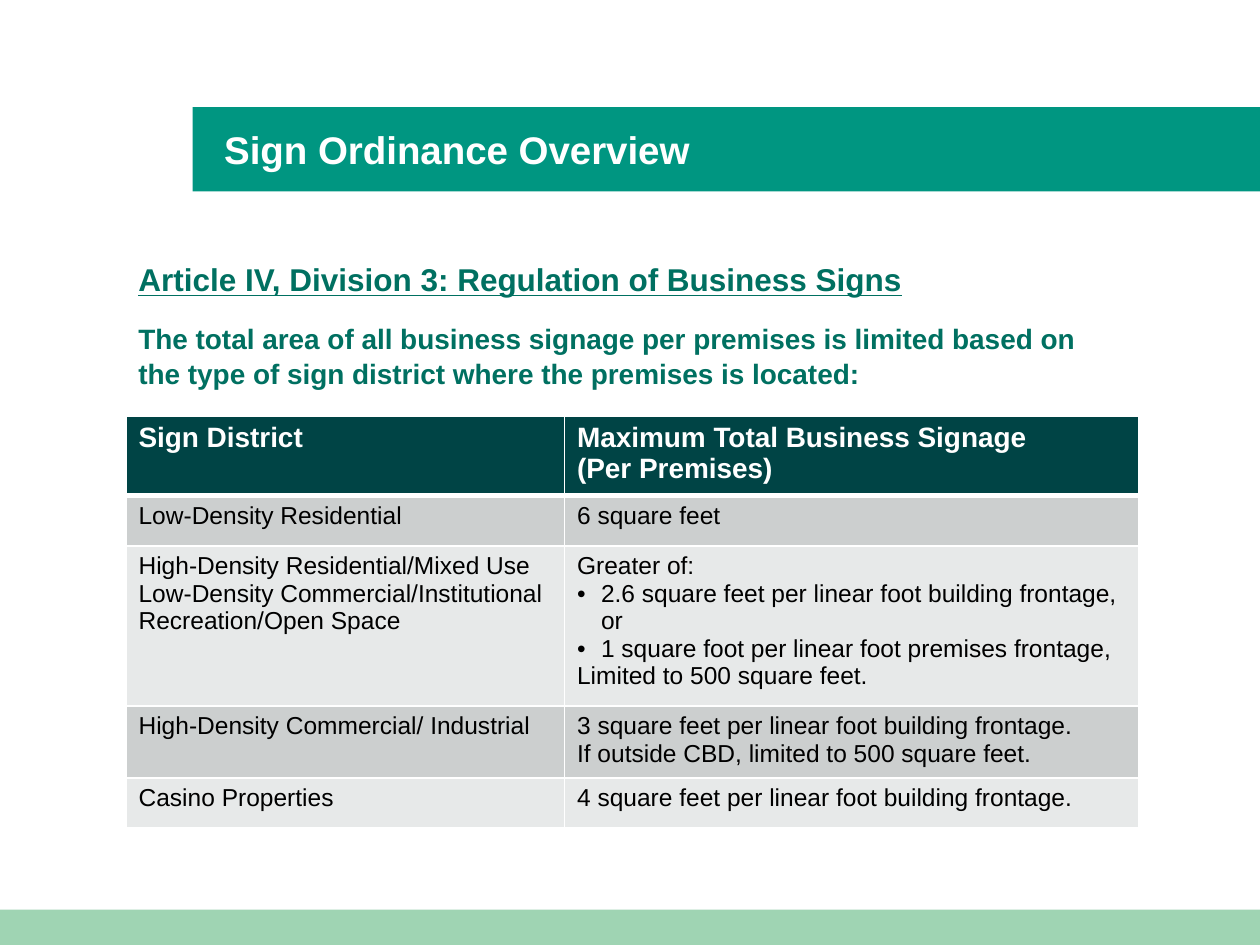
from lxml.etree import SubElement
from pptx import Presentation
from pptx.dml.color import RGBColor
from pptx.enum.shapes import MSO_SHAPE
from pptx.enum.text import MSO_ANCHOR
from pptx.oxml.ns import qn
from pptx.util import Inches, Pt

WHITE, BLACK = "FFFFFF", "000000"
TEAL, MINT, GREEN, DARK = "009681", "9FD4B3", "007061", "004445"
BANDS = ["CCCFCF", "E7E9E9"]
BULLET = "• "

ROWS = [
    ("Sign District", "Maximum Total Business Signage\n(Per Premises)"),
    ("Low-Density Residential", "6 square feet"),
    ("High-Density Residential/Mixed Use\n"
     "Low-Density Commercial/Institutional\n"
     "Recreation/Open Space",
     "Greater of:\n"
     "• 2.6 square feet per linear foot building frontage, or\n"
     "• 1 square foot per linear foot premises frontage,\n"
     "Limited to 500 square feet."),
    ("High-Density Commercial/ Industrial",
     "3 square feet per linear foot building frontage.\n"
     "If outside CBD, limited to 500 square feet."),
    ("Casino Properties", "4 square feet per linear foot building frontage."),
]
WIDTHS = [3.48, 4.56]
HEIGHTS = [0.63, 0.4, 1.27, 0.57, 0.4]


def paint(fill, color):
    fill.solid()
    fill.fore_color.rgb = RGBColor.from_string(color)


def mark(par):
    """Give the paragraph a hanging bullet."""
    props = par._p.get_or_add_pPr()
    props.set("marL", str(Inches(0.19)))
    props.set("indent", str(-Inches(0.19)))
    SubElement(props, qn("a:buFont"), typeface="Arial")
    SubElement(props, qn("a:buChar"), char=BULLET.strip())


def edge(cell, color, base):
    """Draw the four cell borders; base is the bottom width in points."""
    props = cell._tc.get_or_add_tcPr()
    sides = [("L", 1), ("R", 1), ("T", 1), ("B", base)]
    for spot, (side, width) in enumerate(sides):
        line = SubElement(props, qn("a:ln" + side), w=str(Pt(width)))
        fill = SubElement(line, qn("a:solidFill"))
        SubElement(fill, qn("a:srgbClr"), val=color)
        props.insert(spot, line)


class Page:
    def __init__(self, slide, font="Arial"):
        self.slide = slide
        self.font = font

    def style(self, par, size, color, bold=False, under=False):
        for run in par.runs:
            font = run.font
            font.name, font.size = self.font, Pt(size)
            font.bold, font.underline = bold, under
            font.color.rgb = RGBColor.from_string(color)

    def bar(self, x, y, w, h, color):
        shape = self.slide.shapes.add_shape(
            MSO_SHAPE.RECTANGLE, Inches(x), Inches(y), Inches(w), Inches(h))
        shape.shadow.inherit = False
        paint(shape.fill, color)
        shape.line.fill.background()

    def box(self, x, y, w, h, text):
        frame = self.slide.shapes.add_textbox(
            Inches(x), Inches(y), Inches(w), Inches(h)).text_frame
        frame.word_wrap = True
        frame.text = text
        return frame

    def title(self, x, y, w, h, text):
        frame = self.box(x, y, w, h, text)
        frame.vertical_anchor = MSO_ANCHOR.MIDDLE
        frame.margin_left = frame.margin_right = 0
        frame.margin_top = frame.margin_bottom = 0
        self.style(frame.paragraphs[0], 22, WHITE, bold=True)

    def intro(self, x, y, w, h, head, body):
        frame = self.box(x, y, w, h, head + "\n" + body)
        first, last = frame.paragraphs
        for par in (first, last):
            par.space_after = Pt(12)
            par.line_spacing = 1.06
        self.style(first, 18, GREEN, bold=True, under=True)
        self.style(last, 16, GREEN, bold=True)

    def cell(self, cell, text, head, fill):
        paint(cell.fill, fill)
        edge(cell, WHITE, 3 if head else 1)
        cell.text = text
        for par in cell.text_frame.paragraphs:
            if par.text.startswith(BULLET):
                par.text = par.text.removeprefix(BULLET)
                mark(par)
            if head:
                self.style(par, 16, WHITE, bold=True)
            else:
                self.style(par, 14, BLACK)

    def table(self, x, y, rows, widths, heights):
        table = self.slide.shapes.add_table(
            len(rows), len(widths), Inches(x), Inches(y),
            Inches(sum(widths)), Inches(sum(heights))).table
        for col, width in zip(table.columns, widths):
            col.width = Inches(width)
        for r, (row, height) in enumerate(zip(rows, heights)):
            table.rows[r].height = Inches(height)
            fill = BANDS[(r - 1) % 2] if r else DARK
            for c, text in enumerate(row):
                self.cell(table.cell(r, c), text, r == 0, fill)


def main():
    deck = Presentation()
    deck.slide_width, deck.slide_height = Inches(10), Inches(7.5)
    page = Page(deck.slides.add_slide(deck.slide_layouts[6]))
    page.bar(1.53, 0.85, 8.47, 0.67, TEAL)
    page.bar(0, 7.22, 10, 0.28, MINT)
    page.title(1.78, 0.85, 7.64, 0.67, "Sign Ordinance Overview")
    page.intro(1, 2, 7.66, 1.55,
               "Article IV, Division 3: Regulation of Business Signs",
               "The total area of all business signage per premises is limited "
               "based on the type of sign district where the premises is "
               "located:")
    page.table(1, 3.3, ROWS, WIDTHS, HEIGHTS)
    deck.save("out.pptx")


if __name__ == "__main__":
    main()
